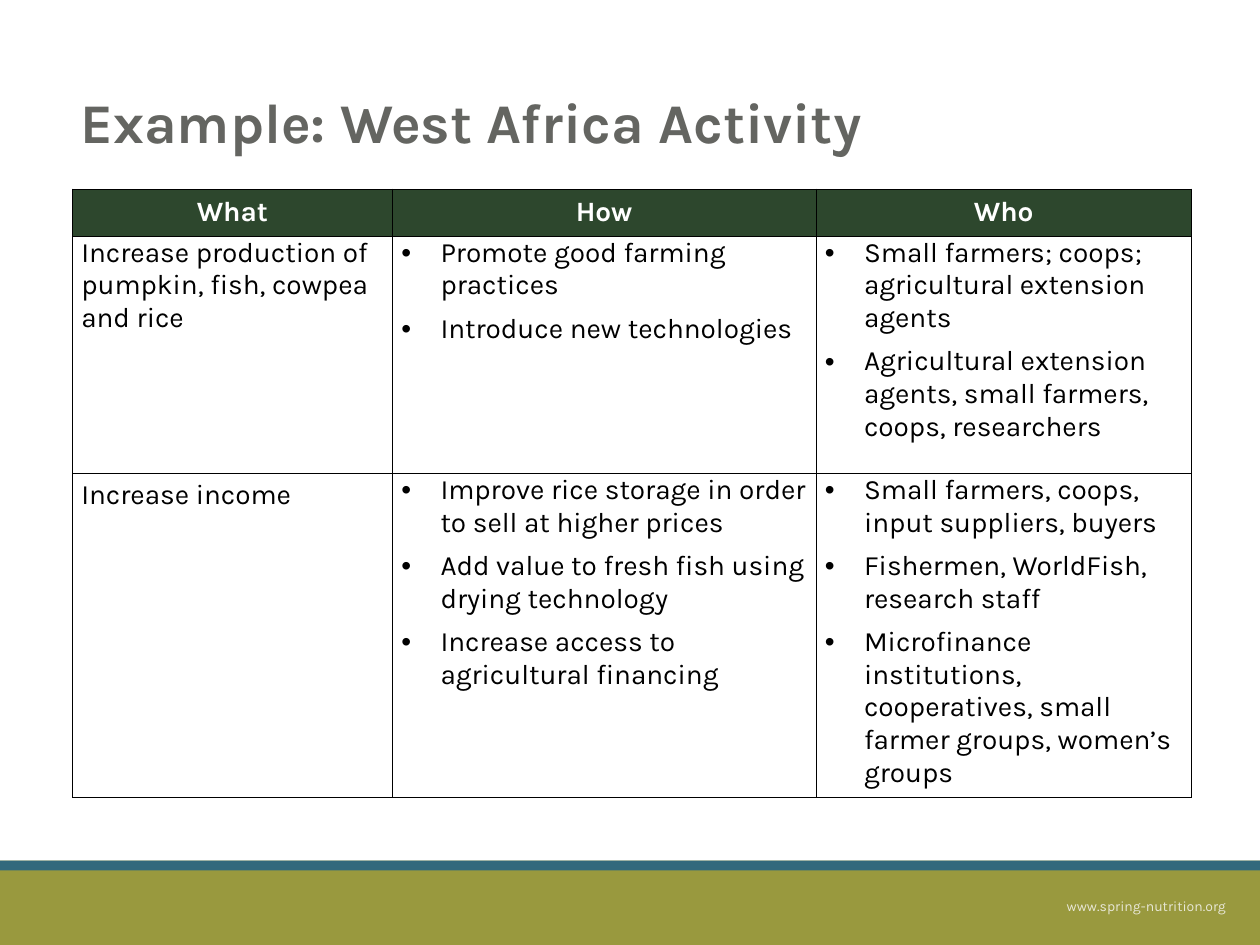
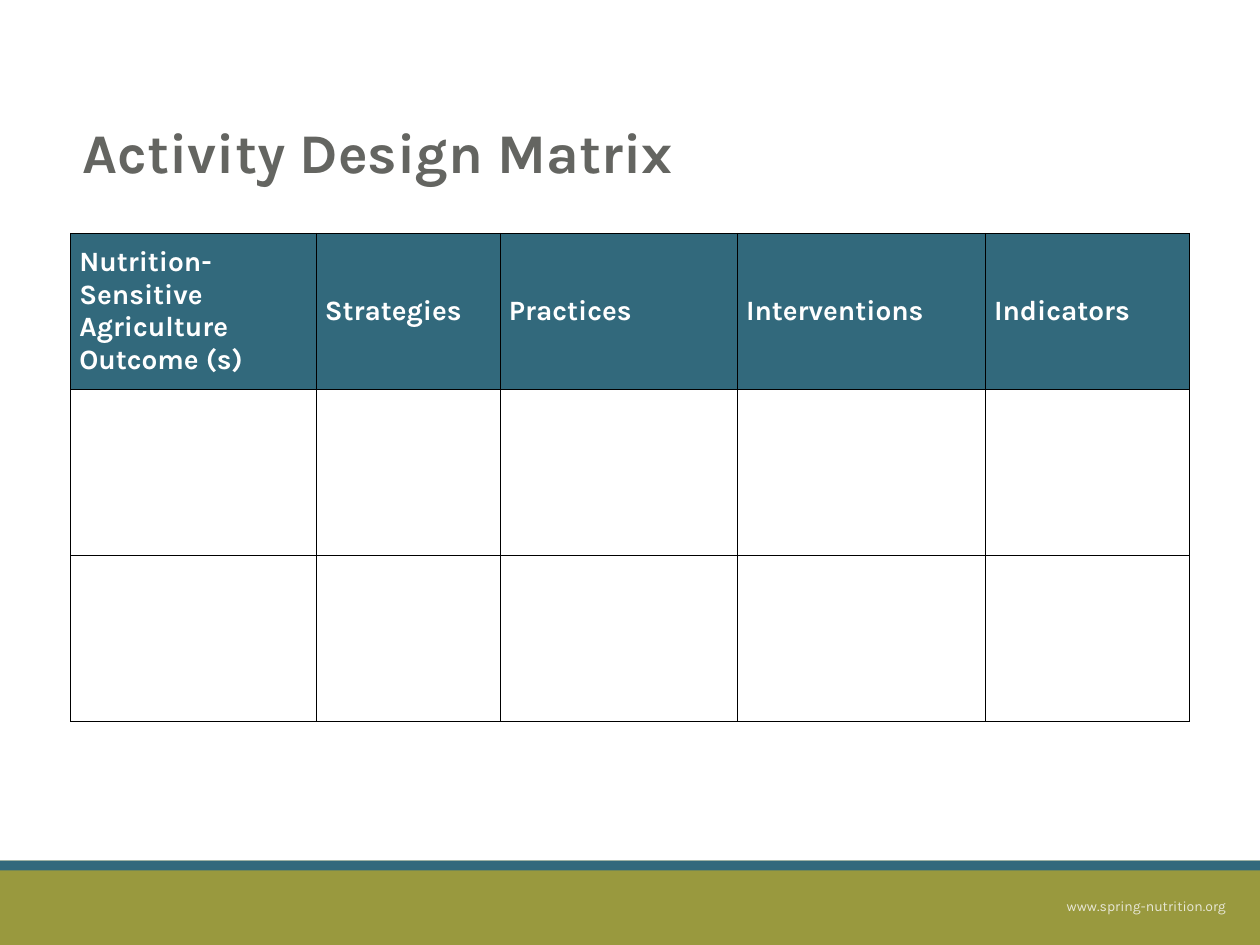
"""Build two slides on planning a nutrition-sensitive agriculture activity."""
from lxml.etree import SubElement
from pptx import Presentation
from pptx.dml.color import RGBColor
from pptx.enum.shapes import MSO_SHAPE
from pptx.enum.text import MSO_ANCHOR, PP_ALIGN
from pptx.oxml.ns import qn
from pptx.util import Cm, Pt

FONT = "Karla"
COLORS = {
    "olive": "99993E",
    "teal": "32697C",
    "forest": "2D472D",
    "title": "646561",
    "footer": "F6F5F0",
    "white": "FFFFFF",
    "black": "000000",
}
FOOTER = "www.spring-nutrition.org"
BANDS = [("olive", 1.7), ("teal", 0.2)]
BAND_TOP = 17.35
INSET = 0.18
HANGING = 0.79

ACTIVITY = {
    "title": "Example: West Africa Activity",
    "title_at": (1.37, 0.69),
    "table_at": (1.46, 3.81),
    "columns": [6.45, 8.54, 7.57],
    "rows": [0.96, 4.78, 5.69],
    "header": {"fill": "forest", "align": PP_ALIGN.CENTER, "anchor": MSO_ANCHOR.TOP, "after": 0},
    "headings": ["What", "How", "Who"],
    "body": [
        [
            {"text": "Increase production of pumpkin, fish, cowpea and rice"},
            ["Promote good farming practices", "Introduce new technologies"],
            [
                "Small farmers; coops; agricultural extension agents",
                "Agricultural extension agents, small farmers, coops, researchers",
            ],
        ],
        [
            {"text": "Increase income", "spacing": 1.15, "after": 6},
            [
                "Improve rice storage in order to sell at higher prices",
                "Add value to fresh fish using drying technology",
                "Increase access to agricultural financing",
            ],
            [
                "Small farmers, coops, input suppliers, buyers",
                "Fishermen, WorldFish, research staff",
                "Microfinance institutions, cooperatives, small farmer groups, women’s groups",
            ],
        ],
    ],
}
MATRIX = {
    "title": "Activity Design Matrix",
    "title_at": (1.42, 1.3),
    "table_at": (1.42, 4.7),
    "columns": [4.95, 3.71, 4.78, 5, 4.11],
    "rows": [3.15, 3.35, 3.35],
    "header": {"fill": "teal", "align": PP_ALIGN.LEFT, "anchor": MSO_ANCHOR.MIDDLE, "after": 10},
    "headings": [
        "Nutrition-Sensitive Agriculture Outcome (s)",
        "Strategies",
        "Practices",
        "Interventions",
        "Indicators",
    ],
    "body": [],
}


def rgb(name):
    """Return the named colour."""
    return RGBColor.from_string(COLORS[name])


def write(paragraph, text, size, color, bold=False, align=PP_ALIGN.LEFT, spacing=None, after=0):
    """Add one formatted run to a paragraph and return it."""
    paragraph.alignment = align
    paragraph.space_after = Pt(after)
    if spacing:
        paragraph.line_spacing = spacing
    run = paragraph.add_run()
    run.text = text
    run.font.name = FONT
    run.font.size = Pt(size)
    run.font.bold = bold
    run.font.color.rgb = rgb(color)
    return run


def add_bullet(paragraph):
    """Give a paragraph a bullet and a hanging indent."""
    properties = paragraph._p.get_or_add_pPr()
    properties.set("marL", str(Cm(HANGING)))
    properties.set("indent", str(-Cm(HANGING)))
    SubElement(properties, qn("a:buFont"), typeface="Arial")
    SubElement(properties, qn("a:buChar"), char="•")


def add_text_box(slide, left, top, width, height):
    """Add a wrapping text box and return its text frame."""
    frame = slide.shapes.add_textbox(Cm(left), Cm(top), Cm(width), Cm(height)).text_frame
    frame.word_wrap = True
    return frame


def add_bands_and_footer(slide, width):
    """Draw the bottom bands and the web address."""
    for color, height in BANDS:
        band = slide.shapes.add_shape(MSO_SHAPE.RECTANGLE, 0, Cm(BAND_TOP), width, Cm(height))
        band.shadow.inherit = False
        band.fill.solid()
        band.fill.fore_color.rgb = rgb(color)
        band.line.fill.background()
    frame = add_text_box(slide, 19.25, 17.96, 5.72, 0.6)
    run = write(frame.paragraphs[0], FOOTER, 8, "footer", align=PP_ALIGN.RIGHT)
    SubElement(run._r.find(".//" + qn("a:srgbClr")), qn("a:alpha"), val="86000")


def style_cell(cell, margin, fill=None):
    """Set the borders, margins and fill of a cell."""
    properties = cell._tc.get_or_add_tcPr()
    for side in ("lnL", "lnR", "lnT", "lnB"):
        line = SubElement(properties, qn("a:" + side), w=str(Pt(0.5)))
        SubElement(SubElement(line, qn("a:solidFill")), qn("a:srgbClr"), val=COLORS["black"])
    cell.margin_left = cell.margin_right = Cm(INSET)
    cell.margin_top = cell.margin_bottom = Cm(margin)
    if fill:
        cell.fill.solid()
        cell.fill.fore_color.rgb = rgb(fill)
    else:
        cell.fill.background()


def fill_body_cell(cell, content):
    """Write a plain statement or a bulleted list into a cell."""
    frame = cell.text_frame
    if isinstance(content, dict):
        write(frame.paragraphs[0], size=16, color="black", **content)
        return
    for index, item in enumerate(content):
        paragraph = frame.add_paragraph() if index else frame.paragraphs[0]
        add_bullet(paragraph)
        write(paragraph, item, 16, "black", after=6)


def add_plan_table(slide, plan):
    """Add the planning table with its header and body rows."""
    columns, rows, header = plan["columns"], plan["rows"], plan["header"]
    left, top = plan["table_at"]
    table = slide.shapes.add_table(
        len(rows), len(columns), Cm(left), Cm(top), Cm(sum(columns)), Cm(sum(rows))
    ).table
    table.horz_banding = False
    for column, width in zip(table.columns, columns):
        column.width = Cm(width)
    for row, height in zip(table.rows, rows):
        row.height = Cm(height)
    for index, row in enumerate(table.rows):
        for cell in row.cells:
            style_cell(cell, 0 if index else 0.13, None if index else header["fill"])
    for cell, heading in zip(table.rows[0].cells, plan["headings"]):
        cell.vertical_anchor = header["anchor"]
        write(cell.text_frame.paragraphs[0], heading, 16, "white", True,
              header["align"], after=header["after"])
    for index, contents in enumerate(plan["body"], start=1):
        for cell, content in zip(table.rows[index].cells, contents):
            fill_body_cell(cell, content)


def main():
    """Build and save the presentation."""
    presentation = Presentation()
    presentation.slide_width, presentation.slide_height = Cm(25.4), Cm(19.05)
    for plan in (ACTIVITY, MATRIX):
        slide = presentation.slides.add_slide(presentation.slide_layouts[6])
        add_bands_and_footer(slide, presentation.slide_width)
        frame = add_text_box(slide, *plan["title_at"], 21.9, 3.68)
        frame.vertical_anchor = MSO_ANCHOR.MIDDLE
        write(frame.paragraphs[0], plan["title"], 32, "title", True, spacing=0.9)
        add_plan_table(slide, plan)
    presentation.save("out.pptx")


if __name__ == "__main__":
    main()
